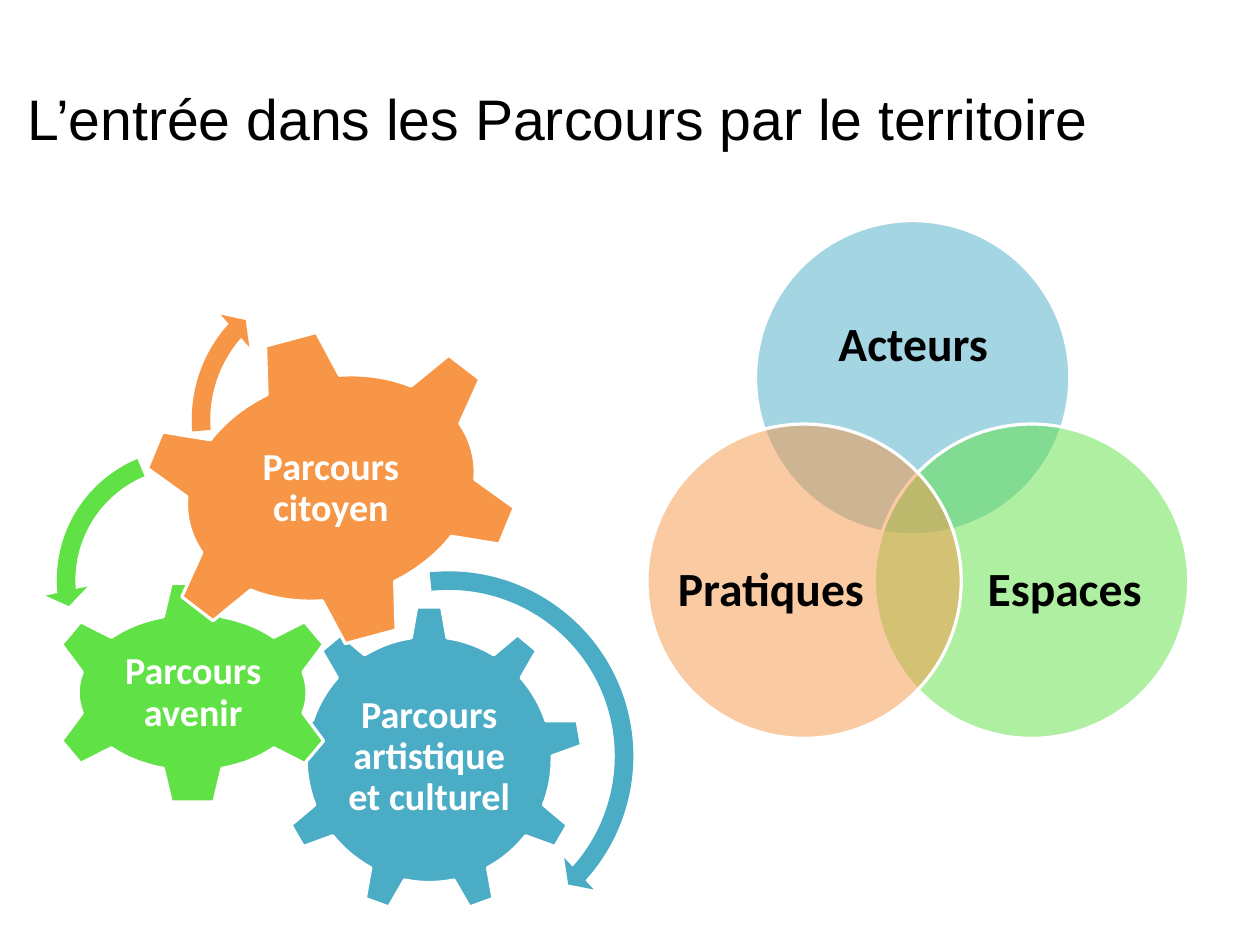
from dataclasses import dataclass

import pptx
import pptx.dml.color
import pptx.enum.shapes
import pptx.enum.text
import pptx.oxml
import pptx.oxml.ns
import pptx.util

Inches = pptx.util.Inches
SHAPES = pptx.enum.shapes.MSO_SHAPE
ALIGN = pptx.enum.text.PP_ALIGN
BLUE, GREEN, ORANGE = "4BACC6", "60E146", "F79646"
WHITE, BLACK = "FFFFFF", "000000"
CIRCLE_SIZE = 2.75
CM_PER_INCH = 2.54

Box = tuple[float, float, float, float]


@dataclass
class Gear:
    label: str
    preset: SHAPES
    box: Box
    label_box: Box
    color: str
    rotation: float = 0


@dataclass
class Arrow:
    preset: SHAPES
    left: float
    top: float
    size: float
    band_percent: float
    angles: tuple[float, float, float]  # head, end and start, in degrees
    head_percent: float
    color: str


@dataclass
class Circle:
    label: str
    left: float
    top: float
    label_box: Box
    color: str


GEARS = [
    Gear("Parcours artistique et culturel", SHAPES.GEAR_9,
         (2.41, 5.3, 2.69, 2.69), (2.95, 5.93, 1.61, 1.39), BLUE),
    Gear("Parcours avenir", SHAPES.GEAR_6,
         (0.39, 5.08, 2.59, 1.96), (0.98, 5.58, 1.42, 0.97), GREEN),
    Gear("Parcours citoyen", SHAPES.GEAR_6,
         (1.2, 2.89, 3.39, 2.76), (1.98, 3.46, 1.83, 1.63), ORANGE, 345),
]
ARROWS = [
    Arrow(SHAPES.CIRCULAR_ARROW, 2.2, 4.89, 3.45,
          4.7, (4.98, 42.04, 264.12), 5.5, BLUE),
    Arrow(SHAPES.LEFT_CIRCULAR_ARROW, 0.39, 3.82, 2.51,
          6.5, (7.17, 174.82, 247.3), 7.5, GREEN),
    Arrow(SHAPES.CIRCULAR_ARROW, 1.57, 2.32, 2.7,
          6, (6.57, 221.9, 175.14), 7, ORANGE),
]
CIRCLES = [
    Circle("Acteurs", 6.61, 1.93, (6.98, 2.41, 2.02, 1.24), BLUE),
    Circle("Espaces", 7.65, 3.71, (8.49, 4.42, 1.65, 1.51), GREEN),
    Circle("Pratiques", 5.66, 3.71, (5.92, 4.42, 1.65, 1.51), ORANGE),
]


def rgb(color: str) -> pptx.dml.color.RGBColor:
    return pptx.dml.color.RGBColor.from_string(color)


def add_filled_shape(shapes, preset: SHAPES, box: Box, color: str,
                     outlined: bool = True, opacity: int = 100):
    shape = shapes.add_shape(preset, *map(Inches, box))
    shape.shadow.inherit = False
    shape.fill.solid()
    shape.fill.fore_color.rgb = rgb(color)
    if opacity < 100:
        color_element = shape.fill._xPr.find(".//" + pptx.oxml.ns.qn("a:srgbClr"))
        color_element.append(pptx.oxml.parse_xml(
            f'<a:alpha {pptx.oxml.ns.nsdecls("a")} val="{opacity * 1000}"/>'))
    if outlined:
        shape.line.color.rgb = rgb(WHITE)
        shape.line.width = pptx.util.Pt(2)
    else:
        shape.line.fill.background()
    return shape


def add_text(shapes, text: str, box: Box, font_name: str, size: float, color: str,
             inset: float = 0, bold: bool = False, align: ALIGN = ALIGN.CENTER,
             line_spacing: float = 0.9) -> None:
    text_frame = shapes.add_textbox(*map(Inches, box)).text_frame
    text_frame.word_wrap = True
    text_frame.vertical_anchor = pptx.enum.text.MSO_ANCHOR.MIDDLE
    text_frame.margin_left = text_frame.margin_right = Inches(inset)
    text_frame.margin_top = text_frame.margin_bottom = Inches(inset)
    text_frame.text = text
    paragraph = text_frame.paragraphs[0]
    paragraph.alignment = align
    paragraph.line_spacing = line_spacing
    font = paragraph.runs[0].font
    font.name, font.size, font.bold = font_name, pptx.util.Pt(size), bold
    font.color.rgb = rgb(color)


def draw_gears(shapes) -> None:
    for gear in GEARS:
        shape = add_filled_shape(shapes, gear.preset, gear.box, gear.color)
        shape.rotation = gear.rotation
        add_text(shapes, gear.label, gear.label_box, "Calibri", 24, WHITE,
                 inset=0.03, bold=True)
    for arrow in ARROWS:
        shape = add_filled_shape(shapes, arrow.preset,
                                 (arrow.left, arrow.top, arrow.size, arrow.size),
                                 arrow.color, outlined=False)
        # One degree is 0.6 adjustment units
        values = [arrow.band_percent / 100, *(angle * 0.6 for angle in arrow.angles),
                  arrow.head_percent / 100]
        for index, value in enumerate(values):
            shape.adjustments[index] = value


def draw_circles(shapes) -> None:
    for circle in CIRCLES:
        add_filled_shape(shapes, SHAPES.OVAL,
                         (circle.left, circle.top, CIRCLE_SIZE, CIRCLE_SIZE),
                         circle.color, opacity=50)
        add_text(shapes, circle.label, circle.label_box, "Calibri", 30, BLACK, bold=True)


def main() -> None:
    # Page of 28 by 21 cm
    presentation = pptx.Presentation()
    presentation.slide_width = Inches(28 / CM_PER_INCH)
    presentation.slide_height = Inches(21 / CM_PER_INCH)
    slide = presentation.slides.add_slide(presentation.slide_layouts[6])

    # Title
    add_text(slide.shapes, "L’entrée dans les Parcours par le territoire",
             (0.24, 0.63, 9.61, 0.79), "Arial", 36, BLACK,
             align=ALIGN.LEFT, line_spacing=1.0)

    # Interlocking gears with their turning arrows
    draw_gears(slide.shapes.add_group_shape().shapes)

    # Overlapping circles
    draw_circles(slide.shapes.add_group_shape().shapes)

    presentation.save("out.pptx")


if __name__ == "__main__":
    main()
